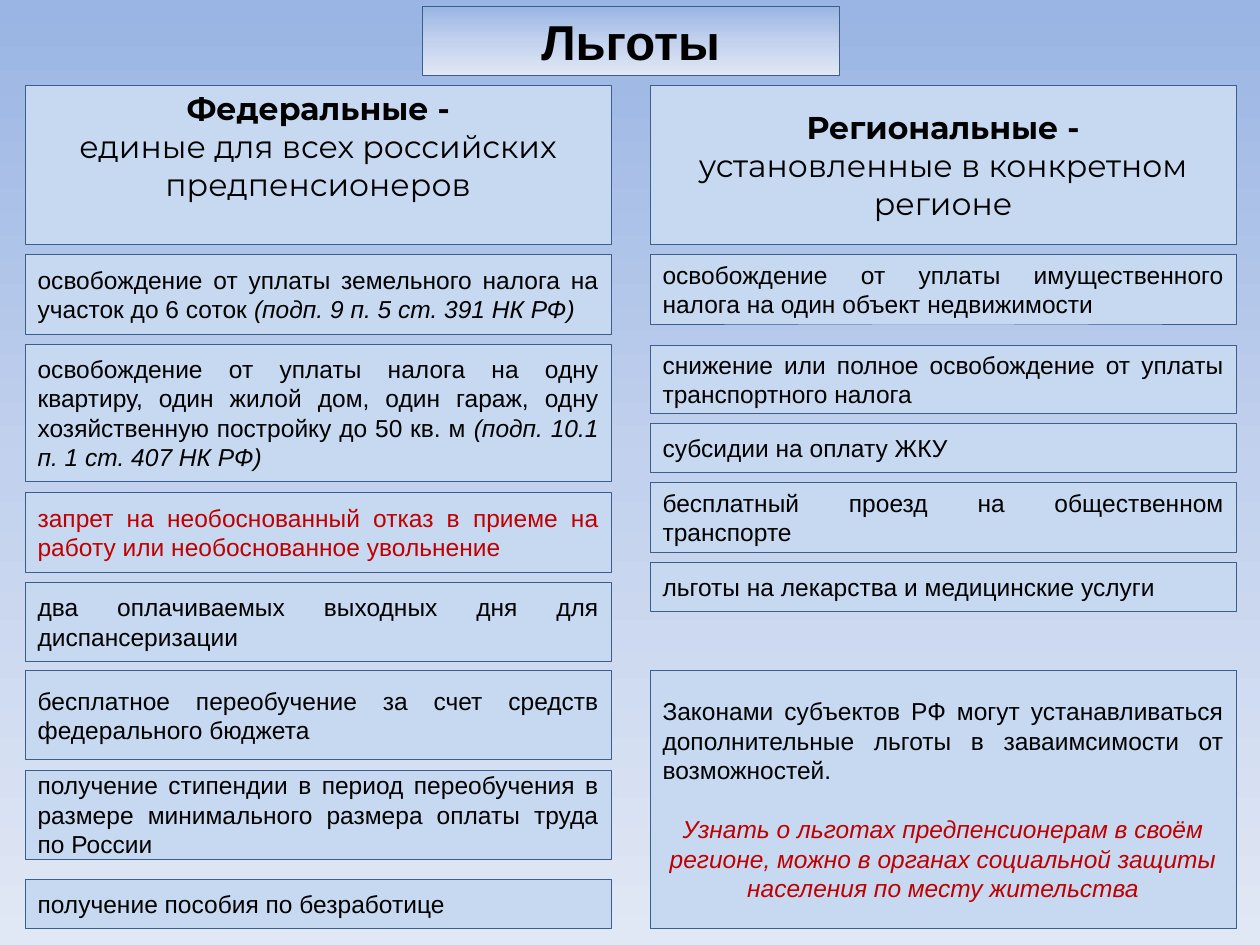
from copy import deepcopy

from pptx import Presentation
from pptx.dml.color import RGBColor
from pptx.enum.shapes import MSO_SHAPE
from pptx.enum.text import MSO_ANCHOR, PP_ALIGN
from pptx.oxml.ns import qn
from pptx.util import Inches, Pt

RECTANGLE = MSO_SHAPE.RECTANGLE
MIDDLE = MSO_ANCHOR.MIDDLE
CENTER, JUSTIFY = PP_ALIGN.CENTER, PP_ALIGN.JUSTIFY
BLACK = RGBColor(0x00, 0x00, 0x00)
RED = RGBColor(0xC0, 0x00, 0x00)
BOX_FILL = RGBColor(0xC6, 0xD9, 0xF1)
BORDER = RGBColor(0x3A, 0x5F, 0x8C)
GRADIENT = [
    (0, RGBColor(0x9A, 0xB5, 0xE4)),
    (0.5, RGBColor(0xC2, 0xD1, 0xED)),
    (1, RGBColor(0xE1, 0xE8, 0xF5)),
]

TITLE_FONT = {"name": "Arial", "size": Pt(28), "bold": True, "italic": False}
HEADING_FONT = {"name": "Montserrat", "size": Pt(18), "bold": True}
SUBHEADING_FONT = {**HEADING_FONT, "bold": False}
BODY_FONT = {"name": "Arial", "size": Pt(14)}
ITALIC_FONT = {**BODY_FONT, "italic": True}

COLUMN_WIDTH = 4.65
HEADING_TOP, HEADING_HEIGHT = 0.68, 1.26
TITLE = "Льготы"
COLUMNS = [
    {
        "left": 0.2,
        "heading": ("Федеральные -", "единые для всех российских предпенсионеров"),
        "bottom_margin": 0.35,
        "benefits": [
            (2.02, 0.63, "освобождение от уплаты земельного налога на участок до 6 соток ",
             "(подп. 9 п. 5 ст. 391 НК РФ)", BLACK),
            (2.73, 1.09, "освобождение от уплаты налога на одну квартиру, один жилой дом, "
             "один гараж, одну хозяйственную постройку до 50 кв. м ",
             "(подп. 10.1 п. 1 ст. 407 НК РФ)", BLACK),
            (3.91, 0.63, "запрет на необоснованный отказ в приеме на работу "
             "или необоснованное увольнение", "", RED),
            (4.62, 0.63, "два оплачиваемых выходных дня для диспансеризации", "", BLACK),
            (5.32, 0.71, "бесплатное переобучение за счет средств федерального бюджета",
             "", BLACK),
            (6.11, 0.71, "получение стипендии в период переобучения в размере "
             "минимального размера оплаты труда по России", "", BLACK),
            (6.98, 0.39, "получение пособия по безработице", "", BLACK),
        ],
    },
    {
        "left": 5.16,
        "heading": ("Региональные -", "установленные в конкретном регионе"),
        "bottom_margin": 0.05,
        "benefits": [
            (2.02, 0.55, "освобождение от уплаты имущественного налога "
             "на один объект недвижимости", "", BLACK),
            (2.74, 0.54, "снижение или полное освобождение от уплаты транспортного налога",
             "", BLACK),
            (3.36, 0.39, "субсидии на оплату ЖКУ", "", BLACK),
            (3.83, 0.55, "бесплатный проезд на общественном транспорте", "", BLACK),
            (4.46, 0.39, "льготы на лекарства и медицинские услуги", "", BLACK),
        ],
    },
]
NOTE_TOP, NOTE_HEIGHT = 5.32, 2.05
NOTE = ("Законами субъектов РФ могут устанавливаться дополнительные льготы "
        "в заваимсимости от возможностей. ")
NOTE_ADVICE = ("Узнать о льготах предпенсионерам в своём регионе, можно "
               "в органах социальной защиты населения по месту жительства")


def paint_gradient(fill, element):
    fill.gradient()
    fill.gradient_angle = 270
    stop_list = next(element.iter(qn("a:gsLst")))
    stop_list.insert(1, deepcopy(stop_list[0]))
    for stop, (position, color) in zip(fill.gradient_stops, GRADIENT):
        stop.position = position
        stop.color.rgb = color


def outline(shape):
    shape.line.color.rgb = BORDER
    shape.line.width = Pt(0.25)


def write(text_frame, paragraphs):
    text_frame.word_wrap = True
    text_frame.vertical_anchor = MIDDLE
    for index, (alignment, runs) in enumerate(paragraphs):
        paragraph = text_frame.add_paragraph() if index else text_frame.paragraphs[0]
        paragraph.alignment = alignment
        for text, font_values, color in runs:
            run = paragraph.add_run()
            run.text = text
            for name, value in font_values.items():
                setattr(run.font, name, value)
            run.font.color.rgb = color


def add_box(slide, left, top, height, paragraphs):
    box = slide.shapes.add_shape(
        RECTANGLE, Inches(left), Inches(top), Inches(COLUMN_WIDTH), Inches(height))
    box.shadow.inherit = False
    box.fill.solid()
    box.fill.fore_color.rgb = BOX_FILL
    outline(box)
    write(box.text_frame, paragraphs)
    return box


def add_title(slide):
    title = slide.shapes.title
    title.left, title.top = Inches(3.35), Inches(0.05)
    title.width, title.height = Inches(3.31), Inches(0.55)
    paint_gradient(title.fill, title.element)
    outline(title)
    write(title.text_frame, [(CENTER, [(TITLE, TITLE_FONT, BLACK)])])


def add_column(slide, column):
    left = column["left"]
    name, meaning = column["heading"]
    heading = add_box(slide, left, HEADING_TOP, HEADING_HEIGHT, [
        (CENTER, [(name, HEADING_FONT, BLACK)]),
        (CENTER, [(meaning, SUBHEADING_FONT, BLACK)]),
    ])
    heading.text_frame.margin_bottom = Inches(column["bottom_margin"])
    for top, height, benefit, law, color in column["benefits"]:
        runs = [(benefit, BODY_FONT, color)]
        if law:
            runs.append((law, ITALIC_FONT, color))
        add_box(slide, left, top, height, [(JUSTIFY, runs)])


def main():
    presentation = Presentation()
    presentation.slide_width, presentation.slide_height = Inches(10), Inches(7.5)
    slide = presentation.slides.add_slide(presentation.slide_layouts[5])
    paint_gradient(slide.background.fill, slide.element)
    add_title(slide)
    for column in COLUMNS:
        add_column(slide, column)
    note = add_box(slide, COLUMNS[1]["left"], NOTE_TOP, NOTE_HEIGHT, [
        (JUSTIFY, [(NOTE, BODY_FONT, BLACK)]),
        (CENTER, [(NOTE_ADVICE, ITALIC_FONT, RED)]),
    ])
    note.text_frame.paragraphs[1].space_before = Pt(17)
    presentation.save("out.pptx")


if __name__ == "__main__":
    main()
